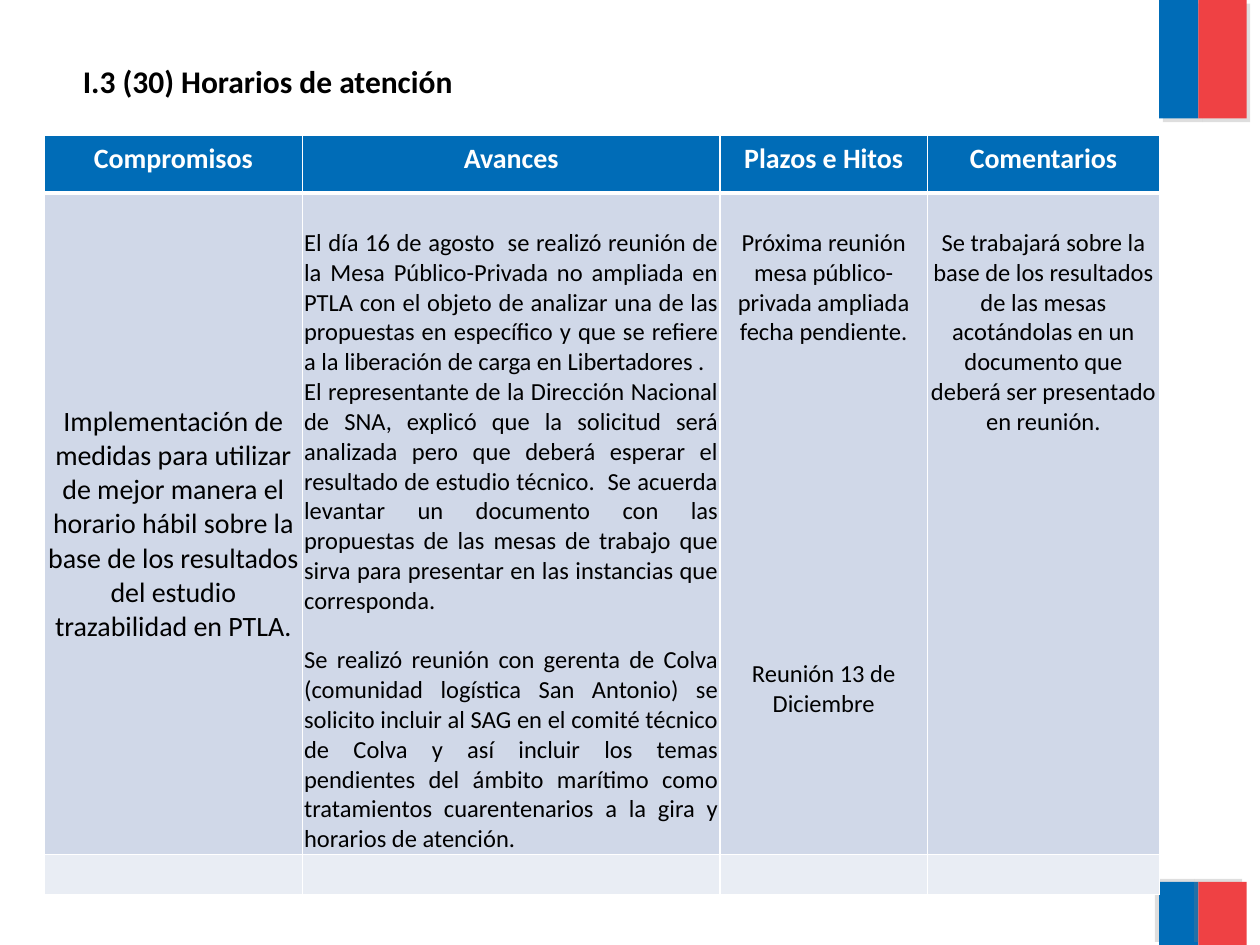
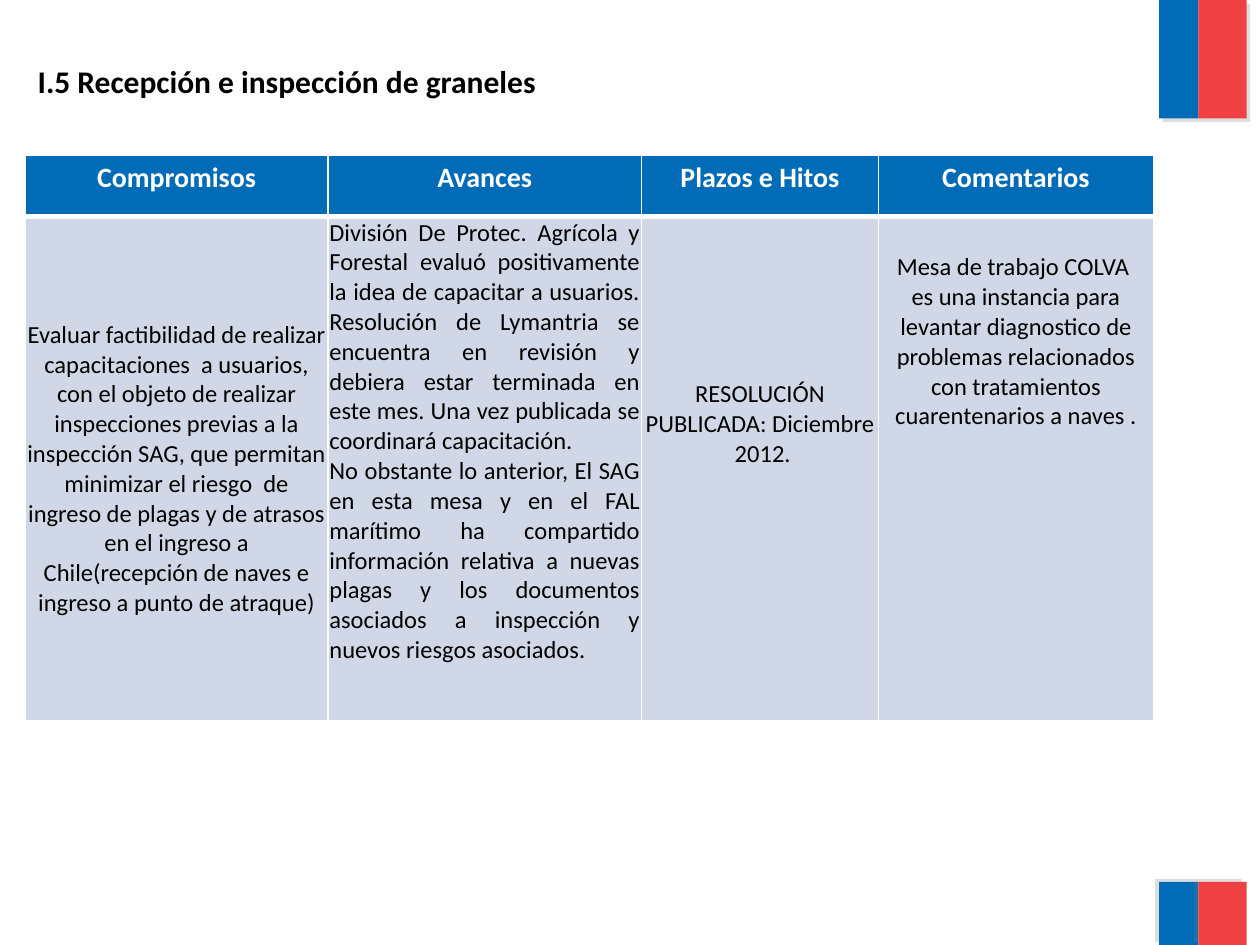
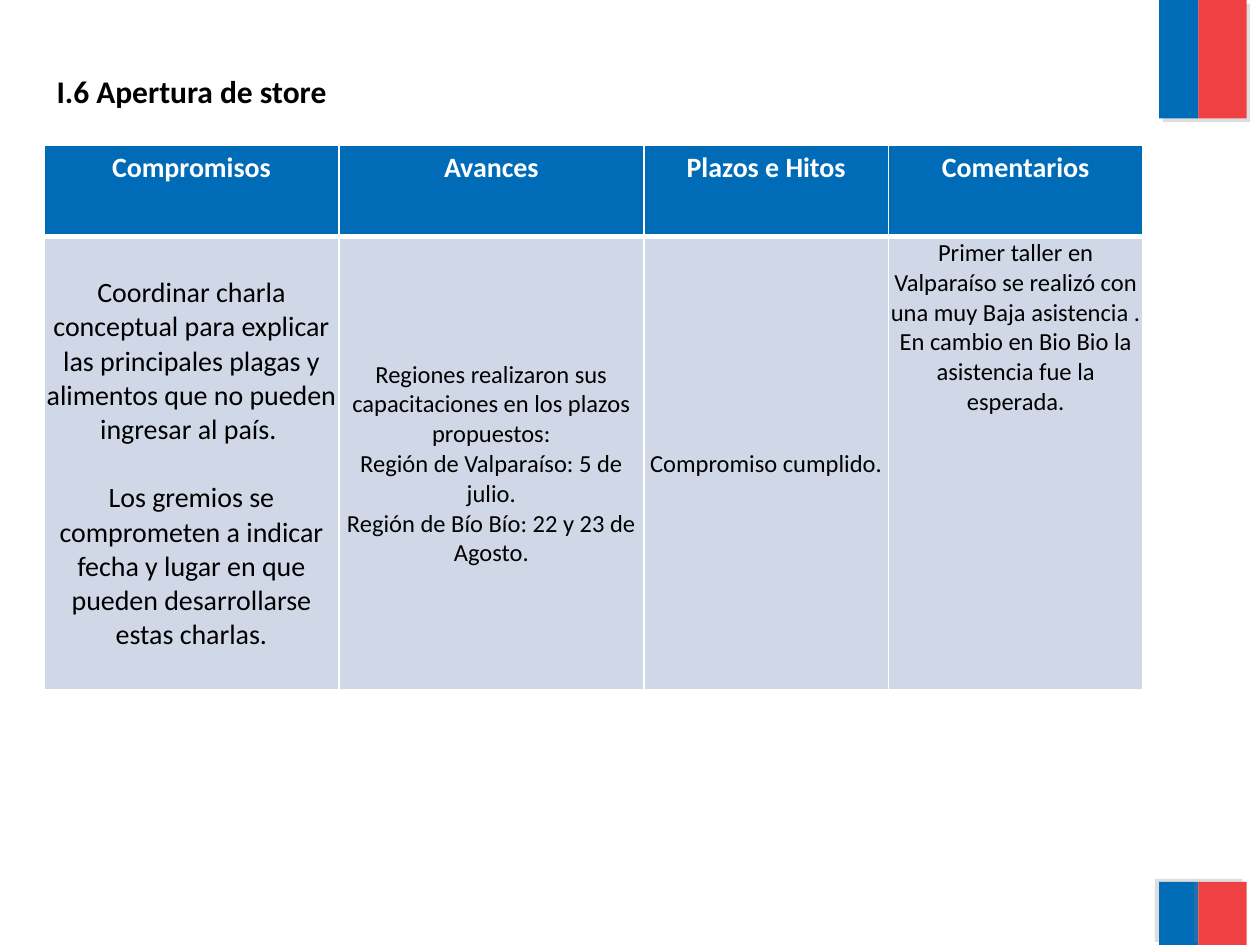
from dataclasses import dataclass, field

from lxml import etree
from pptx import Presentation
from pptx.dml.color import RGBColor
from pptx.enum.shapes import MSO_SHAPE
from pptx.enum.text import MSO_ANCHOR, PP_ALIGN
from pptx.oxml.ns import qn
from pptx.util import Cm, Pt

RECTANGLE = MSO_SHAPE.RECTANGLE
CENTER, JUSTIFY = PP_ALIGN.CENTER, PP_ALIGN.JUSTIFY
TOP, MIDDLE = MSO_ANCHOR.TOP, MSO_ANCHOR.MIDDLE


@dataclass(frozen=True)
class Theme:
    font: str = "Calibri"
    blue: str = "006CB7"
    red: str = "EF4144"
    white: str = "FFFFFF"
    black: str = "000000"
    shadow: str = "808080"
    band: str = "D0D8E8"
    light_band: str = "E9EDF4"
    title_size: int = 18
    large_size: int = 16
    body_size: int = 14
    thin_border: int = 1
    thick_border: int = 3


THEME = Theme()
HEADERS = ("Compromisos", "Avances", "Plazos e Hitos", "Comentarios")


@dataclass
class CellText:
    """Cell content; margins are in cm, gaps map a paragraph index to points before it."""
    texts: tuple = ()
    size: int = THEME.body_size
    align: int = CENTER
    anchor: int = TOP
    top: float = 0.03
    bottom: float = 0
    side: float = 0.03
    gaps: dict = field(default_factory=dict)
    color: str = THEME.black
    bold: bool = False


def header_cell(text):
    return CellText((text,), THEME.large_size, top=0.13, bottom=0.13, side=0.25,
                    color=THEME.white, bold=True)


def style_paragraph(para, size, color, bold):
    para.font.name = THEME.font
    para.font.size = Pt(size)
    para.font.bold = bold
    para.font.color.rgb = RGBColor.from_string(color)


def add_solid_fill(parent, color):
    """Append a solid fill and return its colour element."""
    fill = etree.SubElement(parent, qn("a:solidFill"))
    return etree.SubElement(fill, qn("a:srgbClr"), val=color)


def set_shadow(shape, degrees):
    shape.shadow.inherit = False
    effects = shape._element.spPr.find(qn("a:effectLst"))
    shadow = etree.SubElement(effects, qn("a:outerShdw"), blurRad="0", dist=str(Pt(3)),
                              dir=str(degrees * 60000), algn="ctr", rotWithShape="0")
    color = etree.SubElement(shadow, qn("a:srgbClr"), val=THEME.shadow)
    etree.SubElement(color, qn("a:alpha"), val="25000")


def add_flag_bars(page):
    for top, height, shadow_angle in ((0, 2.39, 45), (17.78, 1.27, 215)):
        for left, width, color in ((23.37, 0.79, THEME.blue), (24.16, 0.97, THEME.red)):
            bar = page.shapes.add_shape(RECTANGLE, Cm(left), Cm(top), Cm(width), Cm(height))
            bar.fill.solid()
            bar.fill.fore_color.rgb = RGBColor.from_string(color)
            bar.line.fill.background()
            set_shadow(bar, shadow_angle)


def add_title(page, text, left, top, width):
    box = page.shapes.add_textbox(Cm(left), Cm(top), Cm(width), Cm(1.02))
    box.text_frame.word_wrap = True
    para = box.text_frame.paragraphs[0]
    para.text = text
    style_paragraph(para, THEME.title_size, THEME.black, True)


def set_borders(cell, top, bottom):
    properties = cell._tc.get_or_add_tcPr()
    widths = {"a:lnL": THEME.thin_border, "a:lnR": THEME.thin_border,
              "a:lnT": top, "a:lnB": bottom}
    for side, width in widths.items():
        add_solid_fill(etree.SubElement(properties, qn(side), w=str(Pt(width))), THEME.white)


def fill_cell(cell, content, color):
    cell.fill.solid()
    cell.fill.fore_color.rgb = RGBColor.from_string(color)
    cell.vertical_anchor = content.anchor
    cell.margin_left = cell.margin_right = Cm(content.side)
    cell.margin_top, cell.margin_bottom = Cm(content.top), Cm(content.bottom)
    frame = cell.text_frame
    for index, text in enumerate(content.texts):
        para = frame.add_paragraph() if index else frame.paragraphs[0]
        para.text = text
        para.alignment = content.align
        if index in content.gaps:
            para.space_before = Pt(content.gaps[index])
        style_paragraph(para, content.size, content.color, content.bold)


def add_progress_table(page, left, top, widths, heights, body):
    """Draw the header row and the body rows; sizes are in cm."""
    rows = [[header_cell(text) for text in HEADERS], *body]
    table = page.shapes.add_table(len(rows), len(widths), Cm(left), Cm(top),
                                  Cm(sum(widths)), Cm(sum(heights))).table
    for column, width in zip(table.columns, widths):
        column.width = Cm(width)
    for row, height in zip(table.rows, heights):
        row.height = Cm(height)
    fills = (THEME.blue, THEME.band, THEME.light_band)
    for row_index, contents in enumerate(rows):
        upper = THEME.thick_border if row_index == 1 else THEME.thin_border
        lower = THEME.thick_border if row_index == 0 else THEME.thin_border
        for column_index, content in enumerate(contents):
            cell = table.cell(row_index, column_index)
            set_borders(cell, upper, lower)
            fill_cell(cell, content, fills[row_index])


def add_page(deck):
    page = deck.slides.add_slide(deck.slide_layouts[6])
    add_flag_bars(page)
    return page


def add_opening_hours(deck):
    page = add_page(deck)
    commitments = [
        CellText((
            "Implementación de medidas para utilizar de mejor manera el horario hábil sobre la "
            "base de los resultados del estudio trazabilidad en PTLA.",
        ), THEME.large_size, anchor=MIDDLE),
        CellText((
            "El día 16 de agosto  se realizó reunión de la Mesa Público-Privada no ampliada en "
            "PTLA con el objeto de analizar una de las propuestas en específico y que se refiere "
            "a la liberación de carga en Libertadores .",
            "El representante de la Dirección Nacional de SNA, explicó que la solicitud será "
            "analizada pero que deberá esperar el resultado de estudio técnico.  Se acuerda "
            "levantar un documento con las propuestas de las mesas de trabajo que sirva para "
            "presentar en las instancias que corresponda.",
            "Se realizó reunión con gerenta de Colva (comunidad logística San Antonio) se "
            "solicito incluir al SAG en el comité técnico de Colva y así incluir los temas "
            "pendientes del ámbito marítimo como tratamientos cuarentenarios a la gira y "
            "horarios de atención.",
        ), align=JUSTIFY, top=0.71, gaps={2: 17}),
        CellText((
            "Próxima reunión mesa público- privada ampliada fecha pendiente.",
            "Reunión 13 de Diciembre",
        ), top=0.71, gaps={1: 178}),
        CellText((
            "Se trabajará sobre la base de los resultados de las mesas acotándolas en un "
            "documento que deberá ser presentado en reunión.",
        ), top=0.71),
    ]
    empty_row = [CellText() for _ in HEADERS]
    add_progress_table(page, 0.89, 2.72, (5.21, 8.41, 4.19, 4.67), (1.17, 13.33, 0.8),
                       [commitments, empty_row])
    add_title(page, "I.3 (30) Horarios de atención", 1.42, 1.12, 19.2)


def add_bulk_inspection(deck):
    page = add_page(deck)
    commitments = [
        CellText((
            "Evaluar factibilidad de realizar capacitaciones  a usuarios, con el objeto de "
            "realizar inspecciones previas a la inspección SAG, que permitan minimizar el "
            "riesgo  de ingreso de plagas y de atrasos en el ingreso a Chile(recepción de naves "
            "e ingreso a punto de atraque)",
        ), anchor=MIDDLE),
        CellText((
            "División De Protec. Agrícola y Forestal evaluó positivamente la idea de capacitar "
            "a usuarios. Resolución de Lymantria se encuentra en revisión y debiera estar "
            "terminada en este mes. Una vez publicada se coordinará capacitación.",
            "No obstante lo anterior, El SAG en esta mesa y en el FAL marítimo ha compartido "
            "información relativa a nuevas plagas y los documentos asociados a inspección y "
            "nuevos riesgos asociados.",
        ), align=JUSTIFY),
        CellText(("RESOLUCIÓN PUBLICADA: Diciembre  2012.",), anchor=MIDDLE, bottom=1.81),
        CellText((
            "Mesa de trabajo COLVA  es una instancia para levantar diagnostico de problemas "
            "relacionados con tratamientos cuarentenarios a naves .",
        ), top=0.73, side=0.25),
    ]
    add_progress_table(page, 0.51, 3.12, (6.1, 6.32, 4.78, 5.54), (1.24, 10.16), [commitments])
    add_title(page, "I.5 Recepción e inspección de graneles", 0.51, 1.12, 19.8)


def add_store_opening(deck):
    page = add_page(deck)
    commitments = [
        CellText((
            "Coordinar charla conceptual para explicar las principales plagas y alimentos que "
            "no pueden ingresar al país. ",
            "Los gremios se comprometen a indicar fecha y lugar en que pueden desarrollarse "
            "estas charlas.",
        ), THEME.large_size, anchor=MIDDLE, gaps={1: 19.5}),
        CellText((
            "Regiones realizaron sus capacitaciones en los plazos propuestos:",
            "Región de Valparaíso: 5 de julio.",
            "Región de Bío Bío: 22 y 23 de Agosto.",
        ), anchor=MIDDLE),
        CellText(("Compromiso cumplido.",), anchor=MIDDLE),
        CellText((
            "Primer taller en Valparaíso se realizó con una muy Baja asistencia .",
            "En cambio en Bio Bio la asistencia fue la esperada.",
        )),
    ]
    add_progress_table(page, 0.89, 2.92, (5.94, 6.15, 4.93, 5.13), (1.85, 9.14), [commitments])
    add_title(page, "I.6 Apertura de store", 0.89, 1.32, 18.8)


def main():
    deck = Presentation()
    deck.slide_width, deck.slide_height = Cm(25.4), Cm(19.05)
    add_opening_hours(deck)
    add_bulk_inspection(deck)
    add_store_opening(deck)
    deck.save("out.pptx")


if __name__ == "__main__":
    main()
